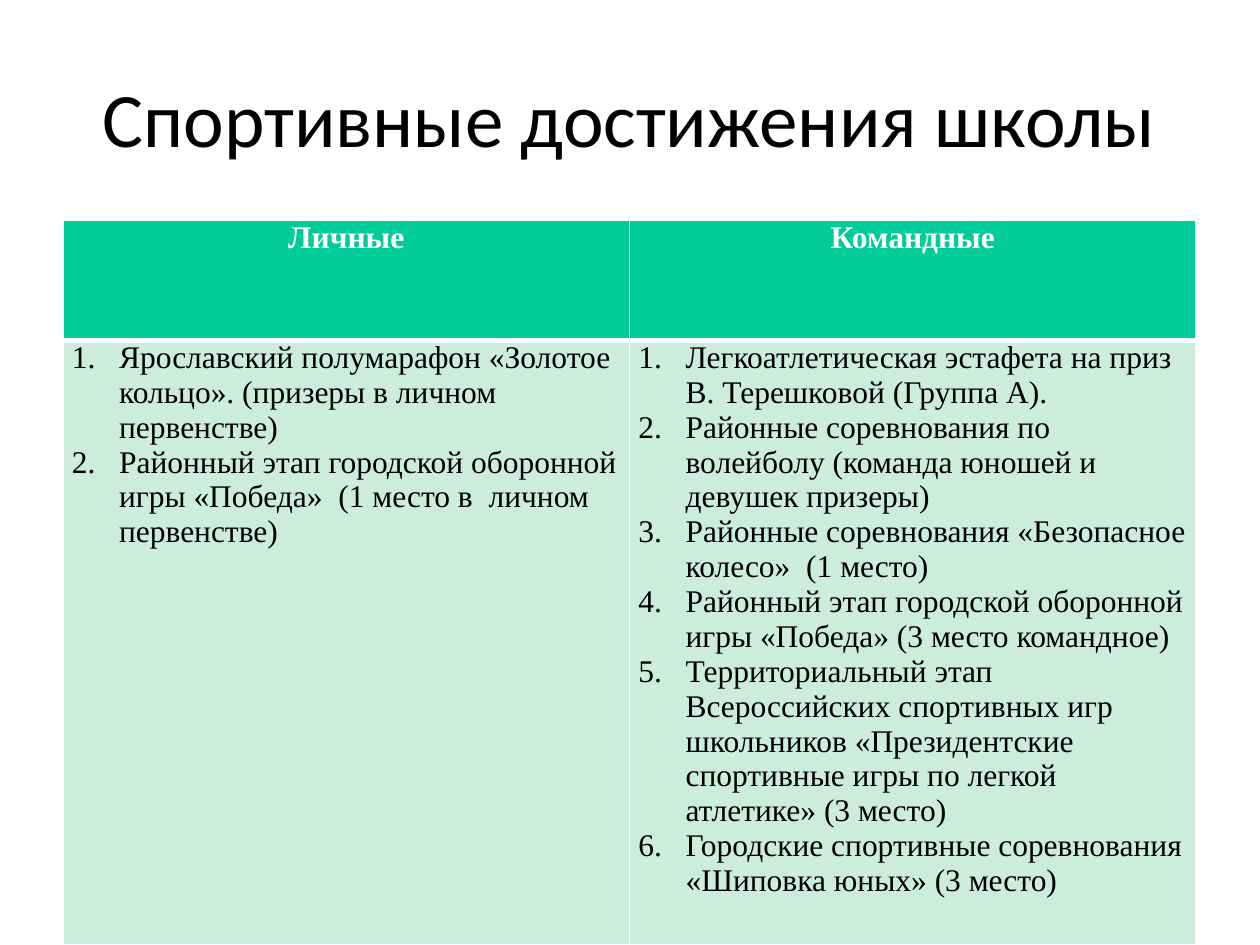
import pptx
import pptx.dml.color
import pptx.enum.text
import pptx.oxml.ns
import pptx.util
from lxml import etree

Cm = pptx.util.Cm
Pt = pptx.util.Pt
RGBColor = pptx.dml.color.RGBColor
CENTER = pptx.enum.text.PP_ALIGN.CENTER

BLACK = RGBColor(0x00, 0x00, 0x00)
WHITE = RGBColor(0xFF, 0xFF, 0xFF)
GREEN = RGBColor(0x00, 0xCC, 0x99)
PALE_GREEN = RGBColor(0xCC, 0xEC, 0xDE)

achievements = {
    "Личные": [
        "Ярославский полумарафон «Золотое кольцо». (призеры в личном первенстве)",
        "Районный этап городской оборонной игры «Победа»  (1 место в  личном первенстве)",
    ],
    "Командные": [
        "Легкоатлетическая эстафета на приз  В. Терешковой (Группа А).",
        "Районные соревнования по волейболу (команда юношей и девушек призеры)",
        "Районные соревнования «Безопасное колесо»  (1 место)",
        "Районный этап городской оборонной игры «Победа» (3 место командное)",
        "Территориальный этап Всероссийских спортивных игр школьников "
        "«Президентские спортивные игры по легкой атлетике» (3 место)",
        "Городские спортивные соревнования «Шиповка юных» (3 место)",
    ],
}


def add_element(parent, tag, **attributes):
    element = etree.SubElement(parent, pptx.oxml.ns.qn(tag))
    for key, value in attributes.items():
        element.set(key, str(value))
    return element


def style_cell(cell, fill, color, bold, bottom_width):
    cell.margin_left = cell.margin_right = Cm(0.18)
    cell.margin_top = cell.margin_bottom = 0
    properties = cell._tc.get_or_add_tcPr()
    widths = {"a:lnL": 1, "a:lnR": 1, "a:lnT": 1, "a:lnB": bottom_width}
    for side, width in widths.items():
        border = add_element(properties, side, w=Pt(width))
        border_fill = add_element(border, "a:solidFill")
        add_element(border_fill, "a:srgbClr", val=WHITE)
    cell.fill.solid()
    cell.fill.fore_color.rgb = fill
    for paragraph in cell.text_frame.paragraphs:
        for run in paragraph.runs:
            run.font.name = "Times New Roman"
            run.font.size = Pt(18)
            run.font.bold = bold
            run.font.color.rgb = color


presentation = pptx.Presentation()
presentation.slide_width = Cm(25.4)
presentation.slide_height = Cm(19.05)
slide = presentation.slides.add_slide(presentation.slide_layouts[6])

heading = slide.shapes.add_textbox(Cm(1.27), Cm(0.36), Cm(22.84), Cm(3.99))
heading.text_frame.word_wrap = True
heading.text_frame.vertical_anchor = pptx.enum.text.MSO_ANCHOR.MIDDLE
heading.text_frame.text = "Спортивные достижения школы"
heading_line = heading.text_frame.paragraphs[0]
heading_line.alignment = CENTER
heading_line.font.name = "Calibri"
heading_line.runs[0].font.name = "Calibri"
heading_line.runs[0].font.size = Pt(44)
heading_line.runs[0].font.color.rgb = BLACK

results = slide.shapes.add_table(
    2, len(achievements), Cm(1.27), Cm(4.45), Cm(22.84), Cm(14.35)
).table
results.rows[0].height = Cm(2.41)
results.rows[1].height = Cm(11.94)

for column, (category, awards) in enumerate(achievements.items()):
    results.columns[column].width = Cm(11.42)

    category_cell = results.cell(0, column)
    category_cell.text_frame.text = category
    category_cell.text_frame.paragraphs[0].alignment = CENTER
    style_cell(category_cell, GREEN, WHITE, True, 3)

    awards_cell = results.cell(1, column)
    awards_cell.text_frame.text = "\n".join(awards)
    for award in awards_cell.text_frame.paragraphs:
        numbering = award._p.get_or_add_pPr()
        numbering.set("marL", str(Cm(0.95)))
        numbering.set("indent", str(-Cm(0.95)))
        add_element(numbering, "a:buFont", typeface="+mj-lt")
        add_element(numbering, "a:buAutoNum", type="arabicPeriod")
    style_cell(awards_cell, PALE_GREEN, BLACK, False, 1)

presentation.save("out.pptx")
